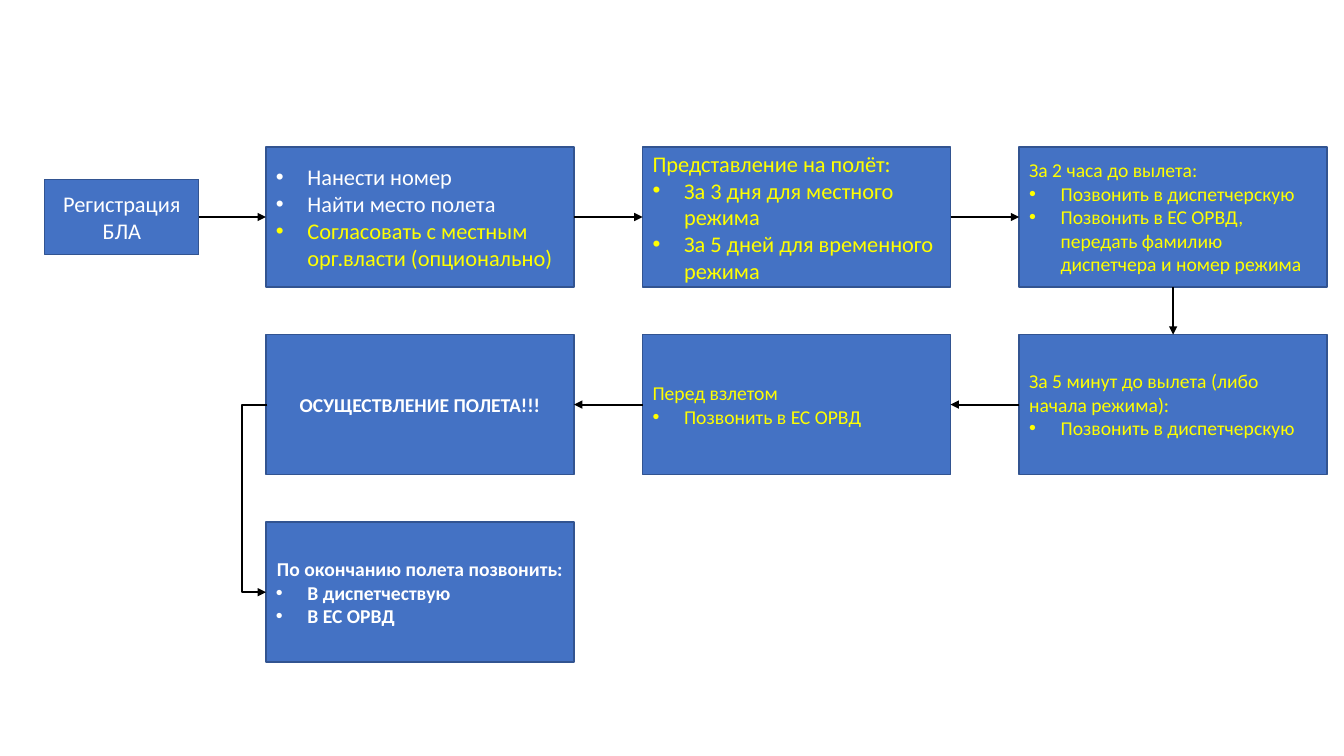
from dataclasses import dataclass

from lxml.etree import SubElement
from pptx import Presentation
from pptx.dml.color import RGBColor
from pptx.enum.shapes import MSO_CONNECTOR, MSO_SHAPE
from pptx.enum.text import MSO_ANCHOR, PP_ALIGN
from pptx.oxml.ns import qn
from pptx.util import Pt


@dataclass(frozen=True)
class Theme:
    """Colours, font and type sizes of the slide."""

    fill: RGBColor = RGBColor(0x44, 0x72, 0xC4)
    border: RGBColor = RGBColor(0x32, 0x54, 0x91)
    arrow: RGBColor = RGBColor(0, 0, 0)
    white: RGBColor = RGBColor(255, 255, 255)
    yellow: RGBColor = RGBColor(255, 255, 0)
    font: str = "Calibri"
    large: int = 16
    small: int = 14


THEME = Theme()
TOP, RIGHT, BOTTOM, LEFT = 0, 3, 2, 1
GRID_LEFT, GRID_TOP = 190, 105
COLUMN_STEP, ROW_STEP = 269, 134
CARD_WIDTH, CARD_HEIGHT = 220, 100
LOOP_REACH = 18


def write_para(para, text, *, size=THEME.small, color=THEME.yellow, bold=False,
               bullet=False, align=PP_ALIGN.LEFT):
    """Write one formatted paragraph, with a hanging bullet if asked."""
    para.alignment = align
    if bullet:
        properties = para._p.get_or_add_pPr()
        properties.set("marL", str(Pt(22.5)))
        properties.set("indent", str(-Pt(22.5)))
        SubElement(properties, qn("a:buFont"), typeface="Arial")
        SubElement(properties, qn("a:buChar"), char="•")
    span = para.add_run()
    span.text = text
    span.font.name = THEME.font
    span.font.size = Pt(size)
    span.font.bold = bold
    span.font.color.rgb = color


def add_card(page, area, lines, **common):
    """Draw a filled box and write its lines, each a text with its own format."""
    box = page.shapes.add_shape(MSO_SHAPE.RECTANGLE, *map(Pt, area))
    box.shadow.inherit = False
    box.fill.solid()
    box.fill.fore_color.rgb = THEME.fill
    box.line.color.rgb = THEME.border
    box.line.width = Pt(1)
    frame = box.text_frame
    frame.word_wrap = True
    frame.vertical_anchor = MSO_ANCHOR.MIDDLE
    for index, (text, own) in enumerate(lines):
        para = frame.add_paragraph() if index else frame.paragraphs[0]
        write_para(para, text, **{**common, **own})
    return box


def cell(column, row):
    """Return the area of a card in the grid."""
    return (GRID_LEFT + column * COLUMN_STEP, GRID_TOP + row * ROW_STEP,
            CARD_WIDTH, CARD_HEIGHT)


def style_arrow(connector):
    """Give a connector its line, its arrowhead and no shadow."""
    connector.line.color.rgb = THEME.arrow
    connector.line.width = Pt(1.5)
    SubElement(connector.line._get_or_add_ln(), qn("a:tailEnd"), type="triangle")
    SubElement(connector.element.spPr, qn("a:effectLst"))


def join(page, start, start_side, end, end_side):
    """Join two boxes with a straight arrow."""
    connector = page.shapes.add_connector(MSO_CONNECTOR.STRAIGHT, 0, 0, 0, 0)
    connector.begin_connect(start, start_side)
    connector.end_connect(end, end_side)
    style_arrow(connector)


def loop_left(page, start, end):
    """Lead an elbow arrow around the left sides of two stacked boxes."""
    offset = Pt(1)
    connector = page.shapes.add_connector(
        MSO_CONNECTOR.ELBOW, start.left + offset, start.top + start.height // 2,
        end.left, end.top + end.height // 2)
    guides = connector.element.spPr.find(qn("a:prstGeom")).get_or_add_avLst()
    SubElement(guides, qn("a:gd"), name="adj1", fmla=f"val {LOOP_REACH * 100000}")
    style_arrow(connector)


def build_flow(page):
    """Place the steps of the flight procedure and connect them."""
    bullet = {"bullet": True}
    left = {"align": PP_ALIGN.LEFT, "bullet": True}
    center = {"align": PP_ALIGN.CENTER}
    registration = add_card(page, (32, 128, 110, 54), [("Регистрация БЛА", center)],
                            size=THEME.large, color=THEME.white)
    preparation = add_card(page, cell(0, 0), [
        ("Нанести номер", {}),
        ("Найти место полета", {}),
        ("Согласовать с местным орг.власти (опционально)", {"color": THEME.yellow}),
    ], size=THEME.large, color=THEME.white, bullet=True)
    request = add_card(page, cell(1, 0), [
        ("Представление на полёт:", {}),
        ("За 3 дня для местного режима", bullet),
        ("За 5 дней для временного режима", bullet),
    ], size=THEME.large)
    two_hours = add_card(page, cell(2, 0), [
        ("За 2 часа до вылета:", {}),
        ("Позвонить в диспетчерскую", bullet),
        ("Позвонить в ЕС ОРВД, передать фамилию диспетчера и номер режима", bullet),
    ])
    five_minutes = add_card(page, cell(2, 1), [
        ("За 5 минут до вылета (либо начала режима):", {}),
        ("Позвонить в диспетчерскую", bullet),
    ])
    takeoff = add_card(page, cell(1, 1), [
        ("Перед взлетом", {}),
        ("Позвонить в ЕС ОРВД", bullet),
    ])
    flight = add_card(page, cell(0, 1), [("ОСУЩЕСТВЛЕНИЕ ПОЛЕТА!!!", center)],
                      color=THEME.white, bold=True)
    finish = add_card(page, cell(0, 2), [
        ("По окончанию полета позвонить:", center),
        ("В диспетчествую", left),
        ("В ЕС ОРВД", left),
    ], color=THEME.white, bold=True)

    for start, end in ((registration, preparation), (preparation, request),
                       (request, two_hours)):
        join(page, start, RIGHT, end, LEFT)
    join(page, two_hours, BOTTOM, five_minutes, TOP)
    for start, end in ((five_minutes, takeoff), (takeoff, flight)):
        join(page, start, LEFT, end, RIGHT)
    loop_left(page, flight, finish)


def main():
    """Build the slide and save the deck."""
    deck = Presentation()
    deck.slide_width, deck.slide_height = Pt(960), Pt(540)
    page = deck.slides.add_slide(deck.slide_layouts[6])
    build_flow(page)
    deck.save("out.pptx")


if __name__ == "__main__":
    main()
